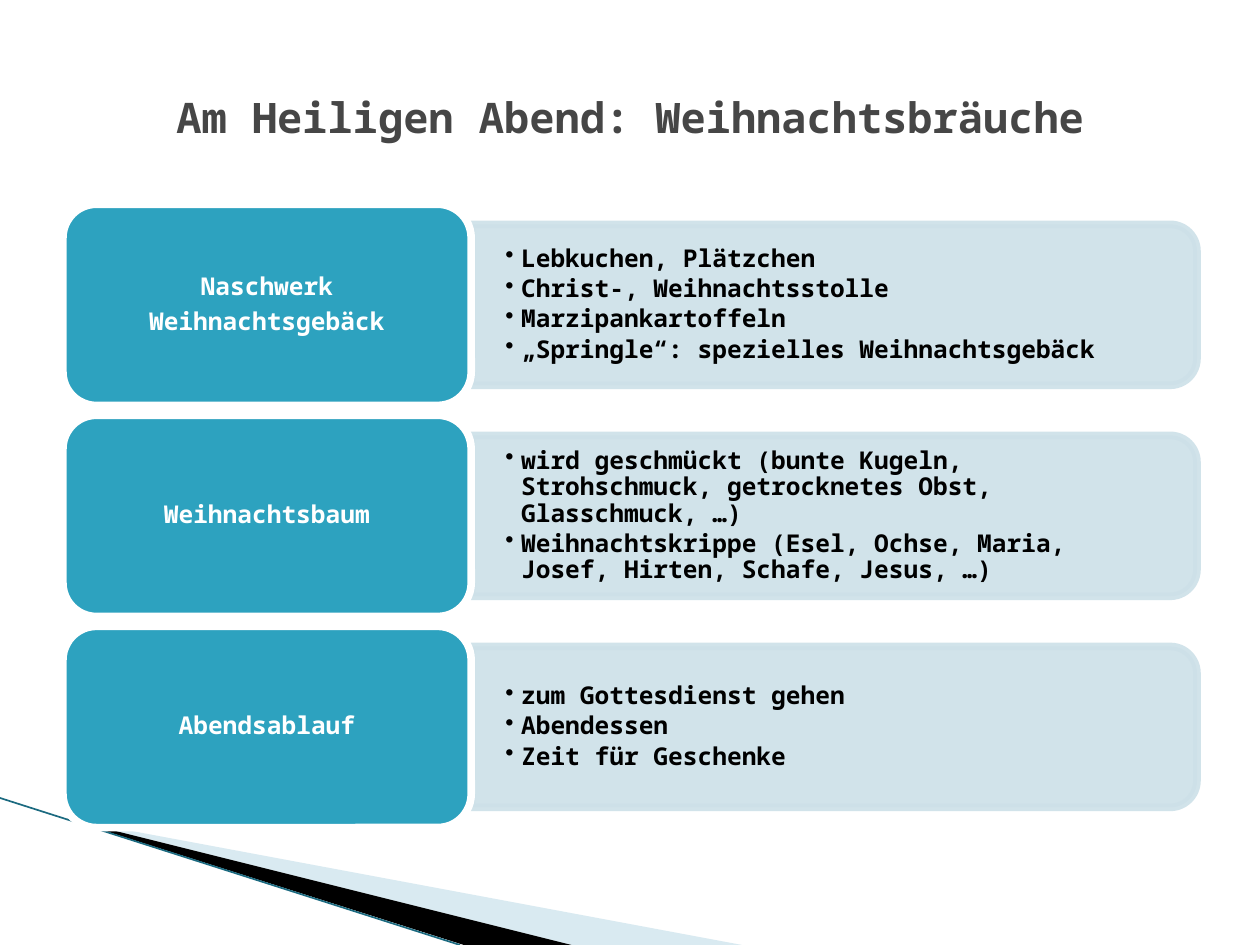
from dataclasses import dataclass

from lxml.etree import SubElement
from pptx import Presentation
from pptx.dml.color import RGBColor
from pptx.enum.shapes import MSO_CONNECTOR, MSO_SHAPE
from pptx.enum.text import MSO_ANCHOR, PP_ALIGN
from pptx.oxml.ns import qn
from pptx.util import Pt


@dataclass(frozen=True)
class Theme:
    font: str = "Noto Sans Mono"
    title_size: float = 24
    body_size: float = 14
    outline: float = 4.33
    title: str = "464646"
    label: str = "2DA2BF"
    panel: str = "CDE0E8"
    wedge: str = "A0CBDC"
    edge: str = "1B6A80"
    black: str = "000000"
    white: str = "FFFFFF"


THEME = Theme()

CUSTOMS = [
    (["Naschwerk", "Weihnachtsgebäck"],
     ["Lebkuchen, Plätzchen", "Christ-, Weihnachtsstolle", "Marzipankartoffeln",
      "„Springle“: spezielles Weihnachtsgebäck"]),
    (["Weihnachtsbaum"],
     ["wird geschmückt (bunte Kugeln, Strohschmuck, getrocknetes Obst, Glasschmuck, …)",
      "Weihnachtskrippe (Esel, Ochse, Maria, Josef, Hirten, Schafe, Jesus, …)"]),
    (["Abendsablauf"],
     ["zum Gottesdienst gehen", "Abendessen", "Zeit für Geschenke"]),
]


def paint(fill, color, opacity=100):
    fill.solid()
    fill.fore_color.rgb = RGBColor.from_string(color)
    if opacity < 100:
        for rgb in fill._xPr.iter(qn("a:srgbClr")):
            SubElement(rgb, qn("a:alpha"), val=str(opacity * 1000))


def set_font(paragraph, size, color):
    font = paragraph.font
    font.name, font.size, font.bold = THEME.font, Pt(size), True
    font.color.rgb = RGBColor.from_string(color)


def add_bullet(paragraph, indent):
    properties = paragraph._p.get_or_add_pPr()
    properties.set("marL", str(Pt(indent)))
    properties.set("indent", str(-Pt(indent)))
    SubElement(properties, qn("a:buChar"), char="•")


def write_lines(frame, lines, color, align, gap, inset_x, inset_y, bullet_indent=None):
    frame.word_wrap = True
    frame.vertical_anchor = MSO_ANCHOR.MIDDLE
    frame.margin_left = frame.margin_right = Pt(inset_x)
    frame.margin_top = frame.margin_bottom = Pt(inset_y)
    for index, line in enumerate(lines):
        paragraph = frame.add_paragraph() if index else frame.paragraphs[0]
        paragraph.text = line
        paragraph.alignment = align
        paragraph.line_spacing = 0.9
        paragraph.space_before = Pt(0)
        paragraph.space_after = Pt(gap)
        if bullet_indent:
            add_bullet(paragraph, bullet_indent)
        set_font(paragraph, THEME.body_size, color)


def add_title(slide, text, left, top, width, height):
    title = slide.shapes.title
    title.left, title.top, title.width, title.height = map(Pt, (left, top, width, height))
    title.text_frame.text = text
    title.text_frame.vertical_anchor = MSO_ANCHOR.MIDDLE
    paragraph = title.text_frame.paragraphs[0]
    paragraph.alignment = PP_ALIGN.CENTER
    set_font(paragraph, THEME.title_size, THEME.title)


def add_corner(slide, left, top, width, height):
    """Two wedges and a thin edge running down to the bottom of the box."""
    bottom = top + height
    tip = (left + 38.5, top + 12)
    middle = (left + 0.77 * width, bottom)
    wedges = [
        (THEME.wedge, 40, [tip, (left + width, bottom), middle]),
        (THEME.black, 100, [tip, middle, (left + 0.625 * width, bottom)]),
    ]
    for color, opacity, points in wedges:
        start, *rest = [(Pt(x), Pt(y)) for x, y in points]
        builder = slide.shapes.build_freeform(*start)
        builder.add_line_segments(rest, close=True)
        wedge = builder.convert_to_shape()
        wedge.shadow.inherit = False
        paint(wedge.fill, color, opacity)
        wedge.line.fill.background()

    edge = slide.shapes.add_connector(
        MSO_CONNECTOR.STRAIGHT, Pt(left), Pt(top), Pt(left + 0.62 * width), Pt(bottom))
    edge.line.width = Pt(0.95)
    edge.line.color.rgb = RGBColor.from_string(THEME.edge)
    SubElement(edge._element.spPr, qn("a:effectLst"))


def add_custom(slide, label_lines, items, left, top, width, height):
    """One row: a label on the left and a bulleted panel on the right."""
    label_width = 0.36 * width
    panel_left, panel_width = left + label_width, width - label_width
    panel_height = 0.8 * height
    center_x, center_y = panel_left + panel_width / 2, top + height / 2

    # Panel, turned so that its rounded corners face right
    panel = slide.shapes.add_shape(
        MSO_SHAPE.ROUND_2_SAME_RECTANGLE,
        Pt(center_x - panel_height / 2), Pt(center_y - panel_width / 2),
        Pt(panel_height), Pt(panel_width))
    panel.rotation = 90
    panel.shadow.inherit = False
    paint(panel.fill, THEME.panel, 90)
    panel.line.width = Pt(THEME.outline)
    paint(panel.line.fill, THEME.panel, 90)

    # Bulleted text over the panel
    text_height = 0.72 * height
    details = slide.shapes.add_textbox(
        Pt(panel_left), Pt(center_y - text_height / 2), Pt(0.99 * panel_width), Pt(text_height))
    write_lines(details.text_frame, items, THEME.black, PP_ALIGN.LEFT,
                gap=2.1, inset_x=19.5, inset_y=9.75, bullet_indent=9)

    # Label
    label = slide.shapes.add_shape(
        MSO_SHAPE.ROUNDED_RECTANGLE, Pt(left), Pt(top), Pt(label_width), Pt(height))
    label.shadow.inherit = False
    paint(label.fill, THEME.label)
    label.line.width = Pt(THEME.outline)
    paint(label.line.fill, THEME.white)
    write_lines(label.text_frame, label_lines, THEME.white, PP_ALIGN.CENTER,
                gap=4.9, inset_x=4.2, inset_y=2.1)


def main():
    presentation = Presentation()
    presentation.slide_width, presentation.slide_height = Pt(720), Pt(540)
    slide = presentation.slides.add_slide(presentation.slide_layouts[5])

    add_corner(slide, 0, 456, 424, 84)
    add_title(slide, "Am Heiligen Abend: Weihnachtsbräuche", 36, 21.6, 648, 90)
    row_pitch = 120.6
    for row, (label_lines, items) in enumerate(CUSTOMS):
        add_custom(slide, label_lines, items, 36, 116.7 + row * row_pitch, 648, 115)

    presentation.save("out.pptx")


if __name__ == "__main__":
    main()
